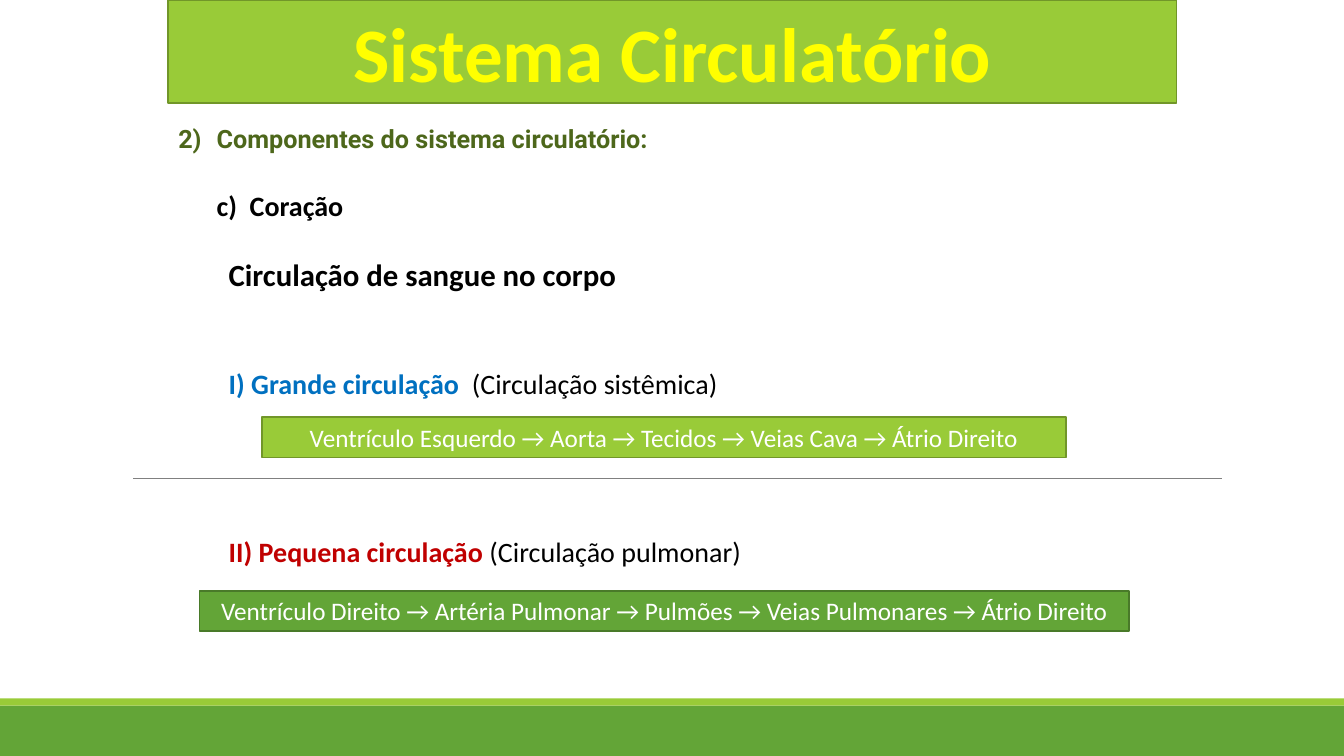
from dataclasses import dataclass
from typing import Optional

import pptx
import pptx.dml.color
import pptx.enum.shapes
import pptx.enum.text
import pptx.oxml
import pptx.oxml.ns
import pptx.util
from pptx.dml.color import RGBColor

Inches = pptx.util.Inches
Pt = pptx.util.Pt

LIME = RGBColor(0x99, 0xCB, 0x38)
LIME_EDGE = RGBColor(0x71, 0x96, 0x29)
GREEN = RGBColor(0x63, 0xA5, 0x37)
GREEN_EDGE = RGBColor(0x49, 0x7A, 0x29)
OLIVE = RGBColor(0x4D, 0x67, 0x1B)
YELLOW = RGBColor(0xFF, 0xFF, 0x00)
BLUE = RGBColor(0x00, 0x70, 0xC0)
RED = RGBColor(0xC0, 0x00, 0x00)
GRAY = RGBColor(0x80, 0x80, 0x80)
BLACK = RGBColor(0x00, 0x00, 0x00)
WHITE = RGBColor(0xFF, 0xFF, 0xFF)


@dataclass
class Bar:
    left: float
    top: float
    width: float
    height: float
    fill: RGBColor
    edge: Optional[RGBColor] = None
    text: str = ""
    size: float = 18
    color: RGBColor = WHITE
    bold: bool = False


@dataclass
class Line:
    heading: str
    detail: str = ""
    color: RGBColor = BLACK
    size: float = 20
    font: str = "Calibri"
    space_before: float = 0
    indent: float = 0
    number: Optional[int] = None


BARS = [
    # Footer bands
    Bar(0, 7, 13.33, 0.5, GREEN),
    Bar(0, 6.93, 13.33, 0.07, LIME),
    # Title banner
    Bar(1.67, 0, 10, 1.02, LIME, LIME_EDGE, "Sistema Circulatório", 55, YELLOW, True),
    # Circulation paths
    Bar(2.6, 4.14, 7.97, 0.4, LIME, LIME_EDGE,
        "Ventrículo Esquerdo → Aorta → Tecidos → Veias Cava → Átrio Direito"),
    Bar(1.98, 5.86, 9.22, 0.4, GREEN, GREEN_EDGE,
        "Ventrículo Direito → Artéria Pulmonar → Pulmões → Veias Pulmonares → Átrio Direito"),
]

OUTLINE = [
    Line("Componentes do sistema circulatório:", color=OLIVE, size=18,
         font="Roboto", indent=0.38, number=2),
    Line("c)  Coração", space_before=25, indent=0.38),
    Line("Circulação de sangue no corpo", size=22, space_before=24, indent=0.5),
    Line("I) Grande circulação  ", "(Circulação sistêmica)", BLUE,
         space_before=53, indent=0.5),
    Line("II) Pequena circulação ", "(Circulação pulmonar)", RED,
         space_before=96, indent=0.5),
]


def add_text(paragraph, text: str, *, size: float, color: RGBColor,
             font: str = "Calibri", bold: bool = False) -> None:
    run = paragraph.add_run()
    run.text = text
    run.font.name = font
    run.font.size = Pt(size)
    run.font.bold = bold
    run.font.color.rgb = color


def add_bar(slide, bar: Bar) -> None:
    shape = slide.shapes.add_shape(
        pptx.enum.shapes.MSO_SHAPE.RECTANGLE,
        Inches(bar.left), Inches(bar.top), Inches(bar.width), Inches(bar.height))
    shape.shadow.inherit = False
    shape.fill.solid()
    shape.fill.fore_color.rgb = bar.fill
    if bar.edge is None:
        shape.line.fill.background()
    else:
        shape.line.color.rgb = bar.edge
        shape.line.width = Pt(1.25)
    if bar.text:
        frame = shape.text_frame
        frame.word_wrap = True
        frame.margin_top = frame.margin_bottom = 0
        frame.vertical_anchor = pptx.enum.text.MSO_ANCHOR.MIDDLE
        paragraph = frame.paragraphs[0]
        paragraph.alignment = pptx.enum.text.PP_ALIGN.CENTER
        add_text(paragraph, bar.text, size=bar.size, color=bar.color, bold=bar.bold)


def add_divider(slide) -> None:
    divider = slide.shapes.add_connector(
        pptx.enum.shapes.MSO_CONNECTOR.STRAIGHT,
        Inches(1.32), Inches(4.75), Inches(12.12), Inches(4.75))
    divider.line.color.rgb = GRAY
    divider.line.width = Pt(0.5)
    properties = divider.element.spPr
    properties.append(pptx.oxml.parse_xml(
        "<a:effectLst %s/>" % pptx.oxml.ns.nsdecls("a")))


def add_outline(slide, lines: list[Line]) -> None:
    box = slide.shapes.add_textbox(Inches(1.67), Inches(1.17), Inches(9.77), Inches(5.7))
    frame = box.text_frame
    frame.word_wrap = True
    for index, line in enumerate(lines):
        paragraph = frame.add_paragraph() if index else frame.paragraphs[0]
        paragraph.alignment = pptx.enum.text.PP_ALIGN.JUSTIFY
        paragraph.space_before = Pt(line.space_before)
        properties = paragraph._p.get_or_add_pPr()
        properties.set("marL", str(Inches(line.indent)))
        if line.number is not None:
            properties.set("indent", str(-Inches(line.indent)))
            properties.append(pptx.oxml.parse_xml(
                '<a:buAutoNum %s type="arabicParenR" startAt="%d"/>'
                % (pptx.oxml.ns.nsdecls("a"), line.number)))
        add_text(paragraph, line.heading, size=line.size, color=line.color,
                 font=line.font, bold=True)
        if line.detail:
            add_text(paragraph, line.detail, size=line.size, color=BLACK)


def main() -> None:
    presentation = pptx.Presentation()
    presentation.slide_width = Inches(13.33)
    presentation.slide_height = Inches(7.5)
    slide = presentation.slides.add_slide(presentation.slide_layouts[6])
    add_divider(slide)
    add_outline(slide, OUTLINE)
    for bar in BARS:
        add_bar(slide, bar)
    presentation.save("out.pptx")


if __name__ == "__main__":
    main()
